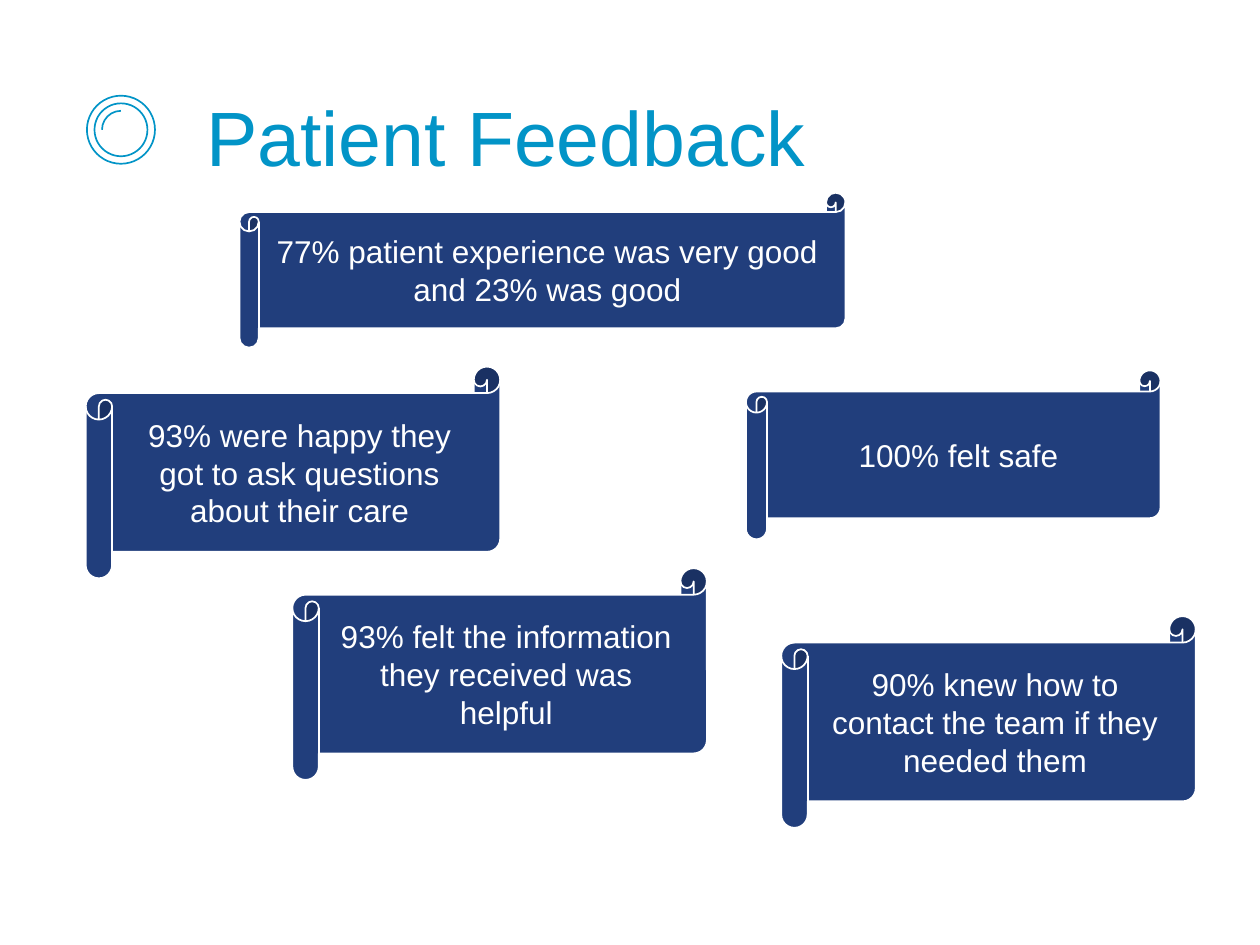
from pptx import Presentation
from pptx.dml.color import RGBColor
from pptx.enum.shapes import MSO_SHAPE
from pptx.enum.text import MSO_ANCHOR, PP_ALIGN
from pptx.util import Inches, Pt

SKY = RGBColor(0x02, 0x94, 0xC7)
NAVY = RGBColor(0x21, 0x3E, 0x7C)
WHITE = RGBColor(0xFF, 0xFF, 0xFF)
FONT = "Arial"

LENS_CENTER = (0.96, 1.03)
HANDLE = [(1.12, 1.26), (1.34, 1.47), (1.35, 1.48), (1.36, 1.48),
          (1.37, 1.47), (1.39, 1.45), (1.39, 1.43), (1.38, 1.43),
          (1.17, 1.21)]

# left, top, width, height, lines
FINDINGS = [
    (0.68, 2.91, 3.29, 1.68,
     ["93% were happy they got to ask questions about their care"]),
    (1.9, 1.53, 4.81, 1.23,
     ["77% patient experience was very good", "and 23% was good"]),
    (5.92, 2.94, 3.29, 1.34, ["100% felt safe"]),
    (6.2, 4.89, 3.29, 1.68,
     ["90% knew how to contact the team if they needed them"]),
    (2.32, 4.51, 3.29, 1.68,
     ["93% felt the information they received was helpful"]),
]


def style_font(paragraph, size, color):
    paragraph.font.name = FONT
    paragraph.font.size = Pt(size)
    paragraph.font.color.rgb = color


def add_title(slide, text):
    title = slide.shapes.add_textbox(
        Inches(1.54), Inches(0.4), Inches(7.77), Inches(1.45))
    frame = title.text_frame
    frame.word_wrap = True
    frame.vertical_anchor = MSO_ANCHOR.MIDDLE
    heading = frame.paragraphs[0]
    heading.text = text
    heading.line_spacing = 0.9
    style_font(heading, 44, SKY)


def outline(part):
    part.shadow.inherit = False
    part.fill.background()
    part.line.color.rgb = SKY
    part.line.width = Pt(0.96)


def add_round(slide, kind, radius):
    """Add an outlined round shape centred on the lens."""
    x, y = LENS_CENTER
    part = slide.shapes.add_shape(
        kind, Inches(x - radius), Inches(y - radius),
        Inches(2 * radius), Inches(2 * radius))
    outline(part)
    return part


def add_magnifier(slide):
    for radius in (0.27, 0.21):
        add_round(slide, MSO_SHAPE.OVAL, radius)
    glint = add_round(slide, MSO_SHAPE.ARC, 0.15)
    # Angles in 60000ths of a degree, divided by 100000: 180 to 270 degrees
    glint.adjustments[0] = 108
    glint.adjustments[1] = 162
    builder = slide.shapes.build_freeform(*HANDLE[0], scale=Inches(1))
    builder.add_line_segments(HANDLE[1:], close=False)
    outline(builder.convert_to_shape())


def add_scroll(slide, left, top, width, height, lines):
    scroll = slide.shapes.add_shape(
        MSO_SHAPE.HORIZONTAL_SCROLL,
        Inches(left), Inches(top), Inches(width), Inches(height))
    scroll.shadow.inherit = False
    scroll.fill.solid()
    scroll.fill.fore_color.rgb = NAVY
    scroll.line.color.rgb = WHITE
    scroll.line.width = Pt(1)
    frame = scroll.text_frame
    frame.word_wrap = True
    frame.vertical_anchor = MSO_ANCHOR.MIDDLE
    frame.text = "\n".join(lines)
    for paragraph in frame.paragraphs:
        paragraph.alignment = PP_ALIGN.CENTER
        style_font(paragraph, 18, WHITE)


def main():
    deck = Presentation()
    deck.slide_width = Inches(10)
    deck.slide_height = Inches(7.5)
    slide = deck.slides.add_slide(deck.slide_layouts[6])
    add_title(slide, "Patient Feedback")
    add_magnifier(slide)
    for finding in FINDINGS:
        add_scroll(slide, *finding)
    deck.save("out.pptx")


if __name__ == "__main__":
    main()
